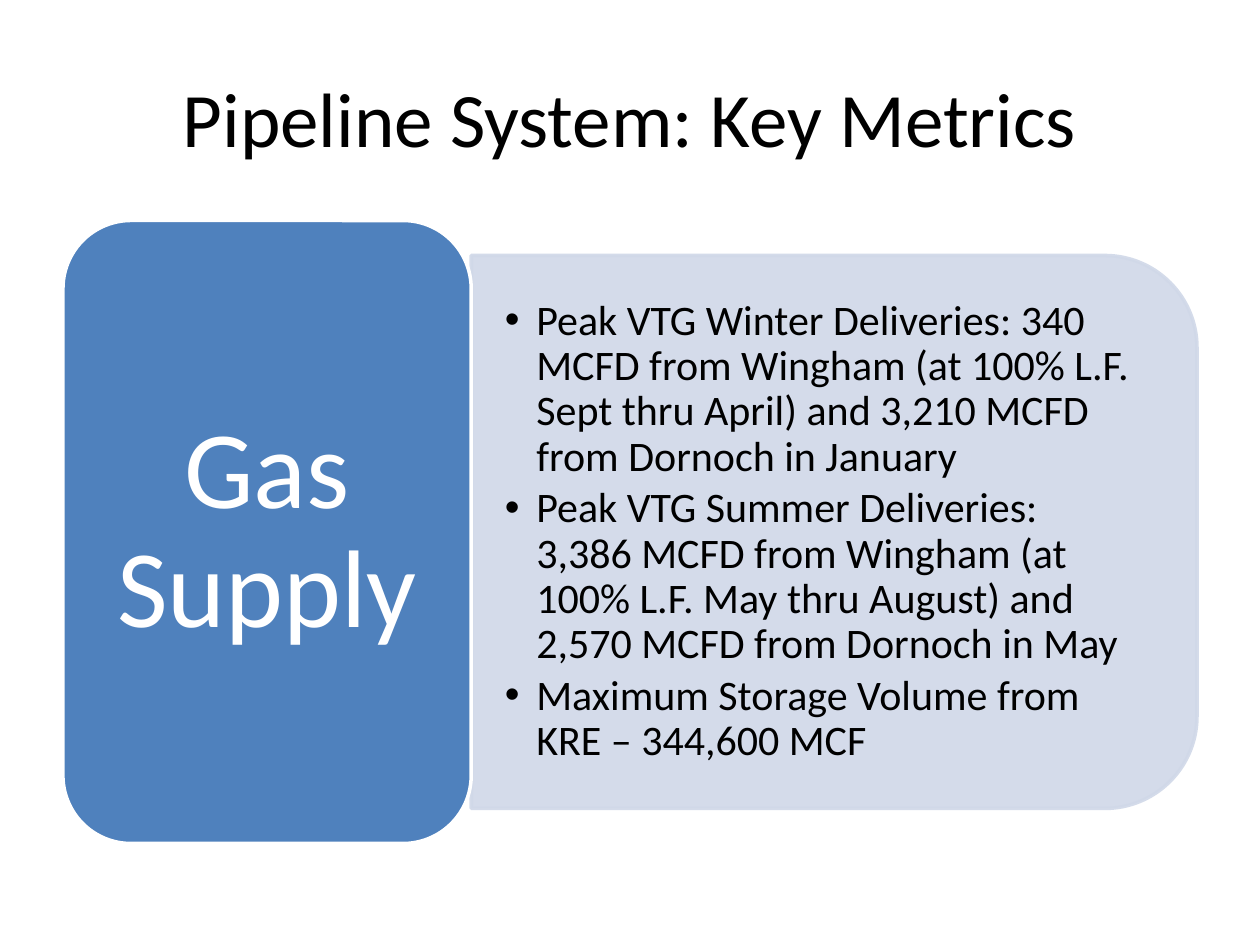
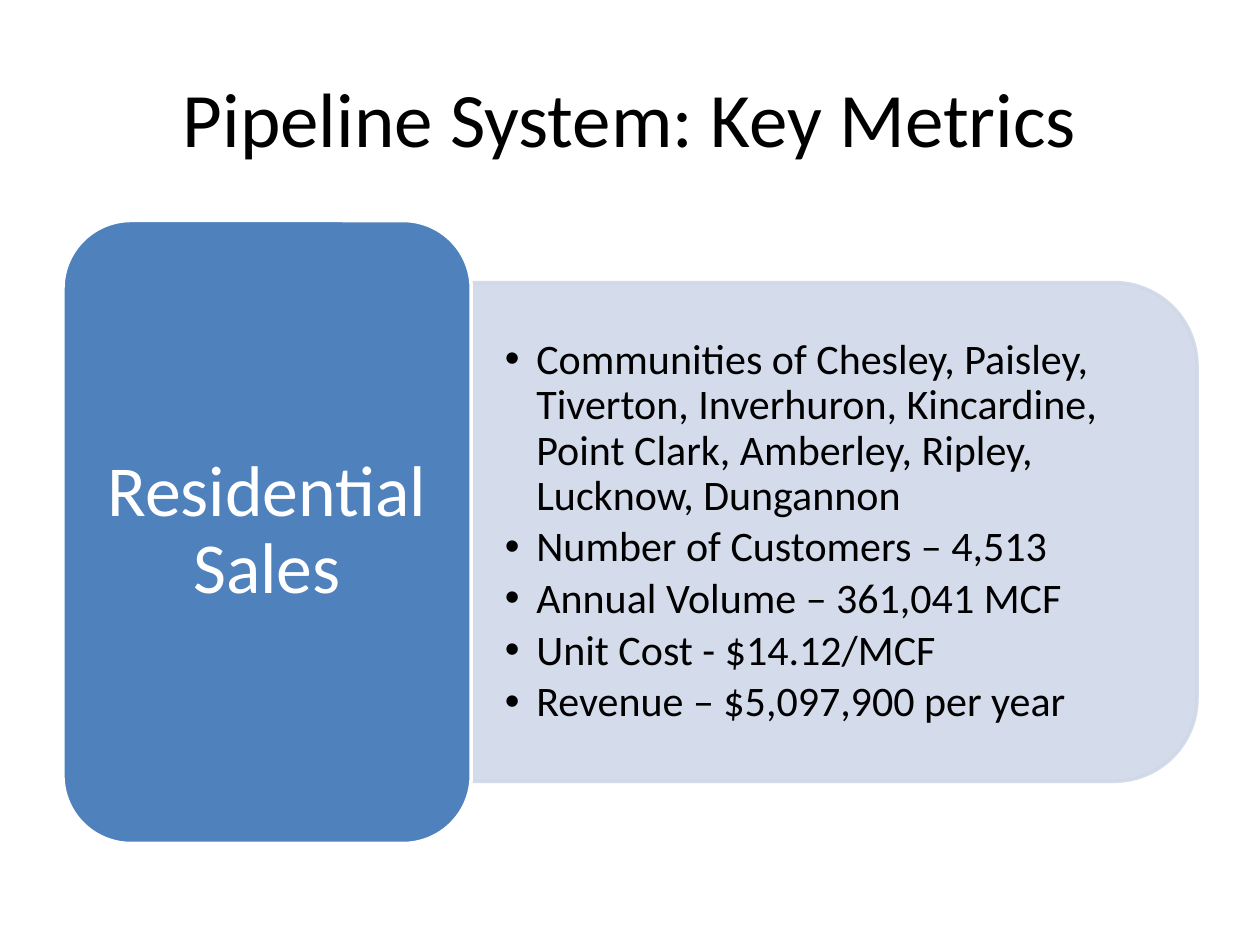
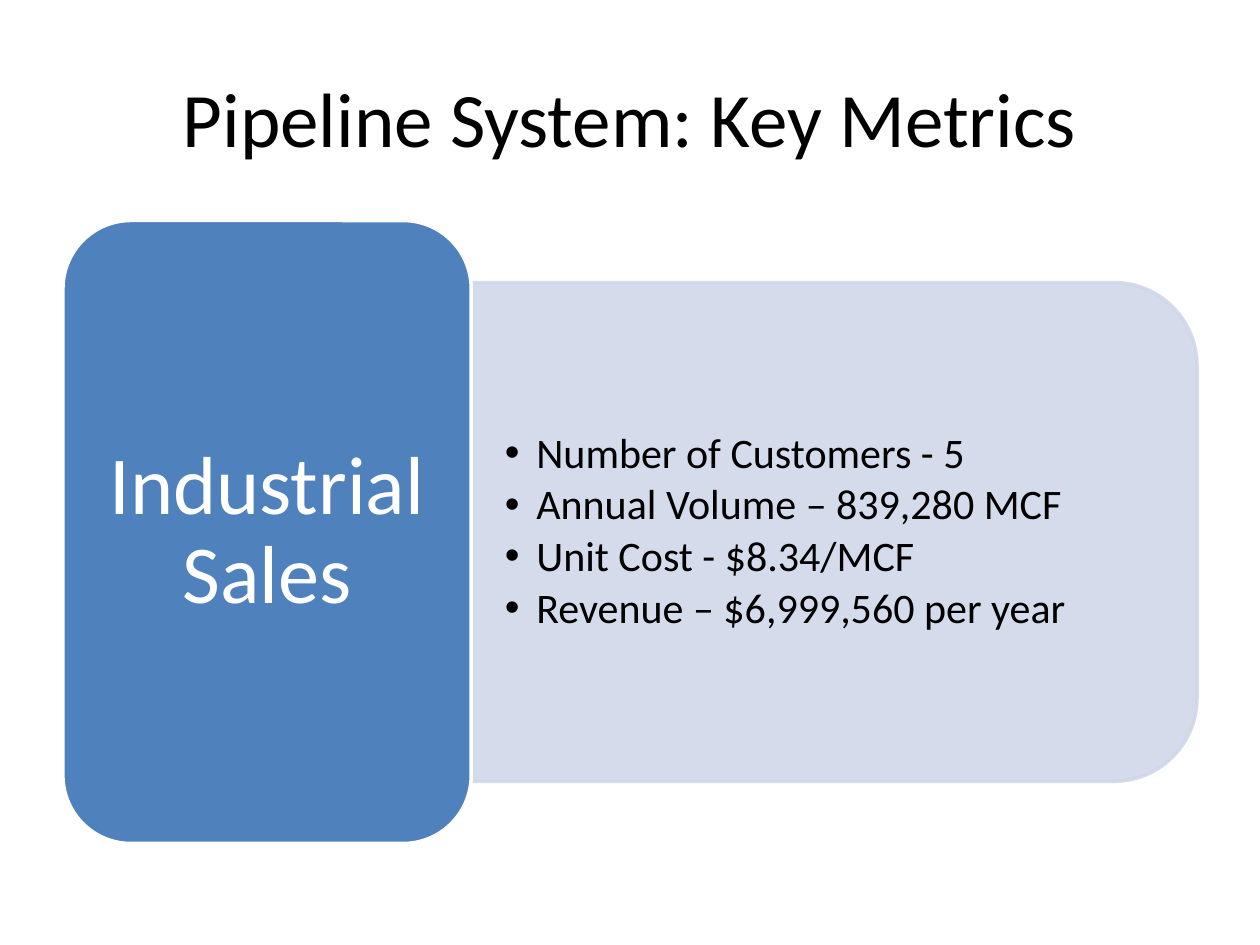
from lxml import etree
from pptx import Presentation
from pptx.dml.color import RGBColor
from pptx.enum.shapes import MSO_SHAPE
from pptx.enum.text import MSO_ANCHOR, MSO_AUTO_SIZE, PP_ALIGN
from pptx.oxml.ns import qn
from pptx.util import Pt

ROUND_CARD = MSO_SHAPE.ROUNDED_RECTANGLE
ROUND_TOP = MSO_SHAPE.ROUND_2_SAME_RECTANGLE
MIDDLE = MSO_ANCHOR.MIDDLE
CENTER, LEFT = PP_ALIGN.CENTER, PP_ALIGN.LEFT
NO_FIT = MSO_AUTO_SIZE.NONE

# Content: card label, label size, panel height, bullets
TITLE = "Pipeline System: Key Metrics"
METRICS = [
    ("Gas Supply", 63, 316, [
        "Peak VTG Winter Deliveries: 340 MCFD from Wingham (at 100% L.F. "
        "Sept thru April) and 3,210 MCFD from Dornoch in January",
        "Peak VTG Summer Deliveries: 3,386 MCFD from Wingham (at 100% L.F. "
        "May thru August) and 2,570 MCFD from Dornoch in May",
        "Maximum Storage Volume from KRE – 344,600 MCF",
    ]),
    ("Residential Sales", 41, 285, [
        "Communities of Chesley, Paisley, Tiverton, Inverhuron, Kincardine, "
        "Point Clark, Amberley, Ripley, Lucknow, Dungannon",
        "Number of Customers – 4,513",
        "Annual Volume – 361,041 MCF",
        "Unit Cost - $14.12/MCF",
        "Revenue – $5,097,900 per year",
    ]),
    ("Industrial Sales", 47, 285, [
        "Number of Customers - 5",
        "Annual Volume – 839,280 MCF",
        "Unit Cost - $8.34/MCF",
        "Revenue – $6,999,560 per year",
    ]),
]

# Shared style
FONT = "Calibri"
BLACK = RGBColor(0x00, 0x00, 0x00)
WHITE = RGBColor(0xFF, 0xFF, 0xFF)
CARD_BLUE = RGBColor(0x4F, 0x81, 0xBD)
PANEL_BLUE = RGBColor(0xD0, 0xD8, 0xE8)
PANEL_ALPHA = 90
TITLE_SIZE, BULLET_SIZE = 44, 24
LINE_SPACING = 0.9

# Shared layout, in points
PAGE_WIDTH, PAGE_HEIGHT = 720, 540
TITLE_BOX = (36, 21.6, 648, 90)
CARD_LEFT, CARD_TOP, CARD_WIDTH, CARD_HEIGHT = 36, 126, 233.3, 356
PANEL_LEFT = CARD_LEFT + CARD_WIDTH
PANEL_WIDTH = PAGE_WIDTH - CARD_LEFT - PANEL_LEFT
MID_Y = CARD_TOP + CARD_HEIGHT / 2
CORNER_INSET = 0.29 / 6  # text clearance of a corner with radius 1/6 of the side
BULLET_INDENT = 18


def place(shape, left, top, width, height):
    shape.left, shape.top = Pt(left), Pt(top)
    shape.width, shape.height = Pt(width), Pt(height)


def set_frame(frame, side, end):
    frame.word_wrap = True
    frame.auto_size = NO_FIT
    frame.vertical_anchor = MIDDLE
    frame.margin_left = frame.margin_right = Pt(side)
    frame.margin_top = frame.margin_bottom = Pt(end)


def style_para(para, size, color, align):
    para.alignment = align
    para.font.name, para.font.size = FONT, Pt(size)
    para.font.color.rgb = color


def add_block(page, kind, box, fill, line):
    block = page.shapes.add_shape(kind, *(Pt(length) for length in box))
    block.shadow.inherit = False
    block.fill.solid()
    block.fill.fore_color.rgb = fill
    block.line.color.rgb = line
    block.line.width = Pt(2)
    return block


def add_panel(page, height):
    # The rounded top is turned to the right, so width and height swap
    center_x = PANEL_LEFT + PANEL_WIDTH / 2
    box = (center_x - height / 2, MID_Y - PANEL_WIDTH / 2, height, PANEL_WIDTH)
    panel = add_block(page, ROUND_TOP, box, PANEL_BLUE, PANEL_BLUE)
    panel.rotation = 90
    for color in panel._element.spPr.iter(qn("a:srgbClr")):
        etree.SubElement(color, qn("a:alpha")).set("val", str(PANEL_ALPHA * 1000))
    return panel


def fill_bullets(body, bullets, panel_height):
    inset = panel_height * CORNER_INSET
    height = panel_height - 2 * inset
    place(body, PANEL_LEFT, MID_Y - height / 2, PANEL_WIDTH - inset, height)
    frame = body.text_frame
    set_frame(frame, 0.8 * BULLET_SIZE, 0.4 * BULLET_SIZE)
    frame.text = "\n".join(bullets)
    for para in frame.paragraphs:
        style_para(para, BULLET_SIZE, BLACK, LEFT)
        para.line_spacing = LINE_SPACING
        para.space_before = Pt(0)
        para.space_after = Pt(0.15 * BULLET_SIZE)
        properties = para._p.get_or_add_pPr()
        properties.set("marL", str(Pt(BULLET_INDENT)))
        properties.set("indent", str(-Pt(BULLET_INDENT)))


def add_card(page, label, size):
    box = (CARD_LEFT, CARD_TOP, CARD_WIDTH, CARD_HEIGHT)
    card = add_block(page, ROUND_CARD, box, CARD_BLUE, WHITE)
    set_frame(card.text_frame, 0.3 * size, 0.15 * size)
    card.text_frame.text = label
    para = card.text_frame.paragraphs[0]
    style_para(para, size, WHITE, CENTER)
    para.line_spacing = LINE_SPACING


def add_page(deck, label, label_size, panel_height, bullets):
    page = deck.slides.add_slide(deck.slide_layouts[1])
    title, body = page.shapes.title, page.placeholders[1]
    place(title, *TITLE_BOX)
    title.text_frame.text = TITLE
    title.text_frame.vertical_anchor = MIDDLE
    style_para(title.text_frame.paragraphs[0], TITLE_SIZE, BLACK, CENTER)

    # Panel behind its bullets, card in front
    panel = add_panel(page, panel_height)
    panel._element.addnext(body._element)
    fill_bullets(body, bullets, panel_height)
    add_card(page, label, label_size)


def main():
    deck = Presentation()
    deck.slide_width, deck.slide_height = Pt(PAGE_WIDTH), Pt(PAGE_HEIGHT)
    for metric in METRICS:
        add_page(deck, *metric)
    deck.save("out.pptx")


if __name__ == "__main__":
    main()
